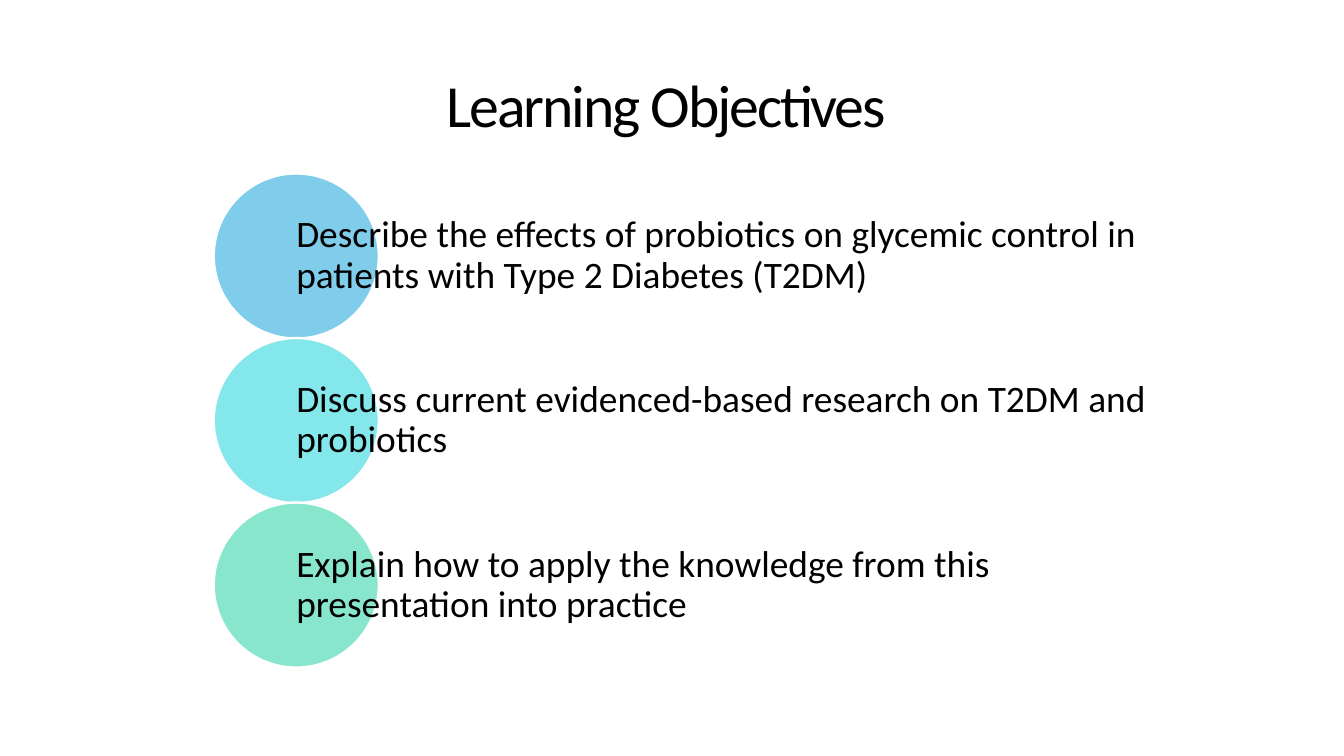
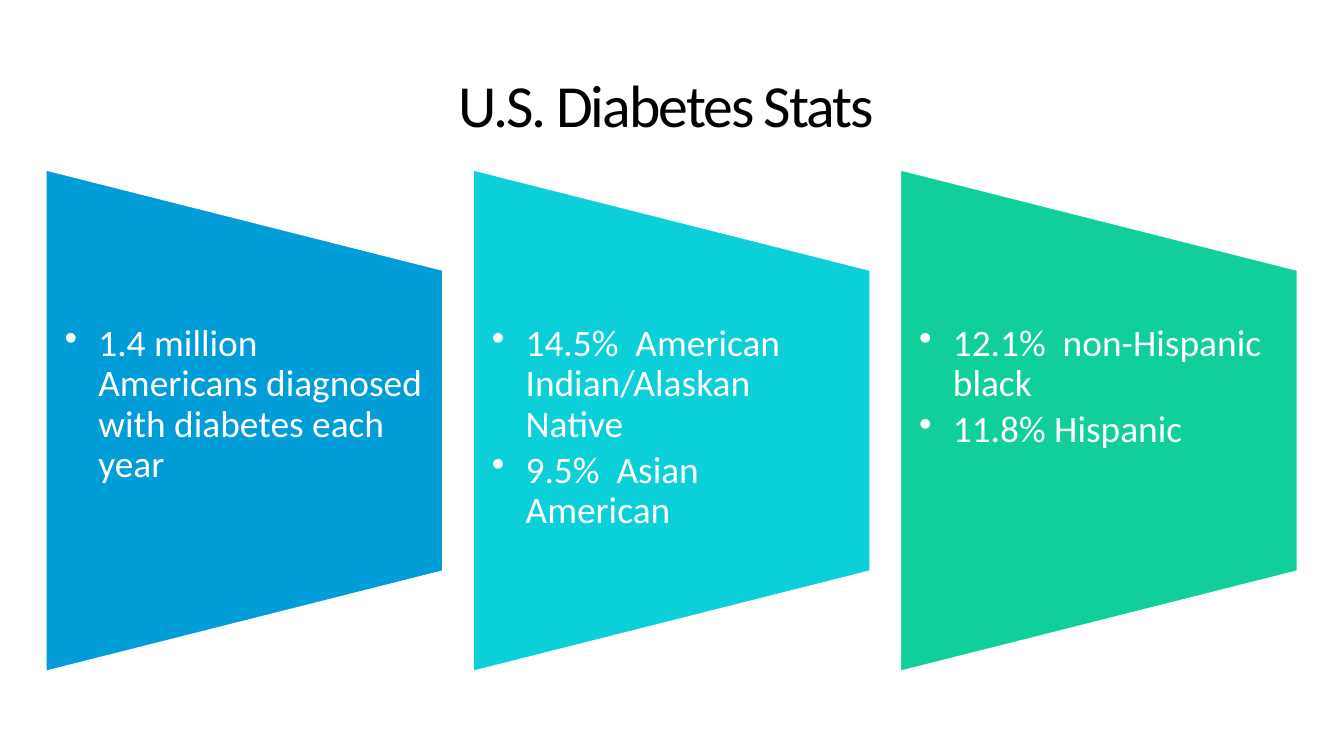
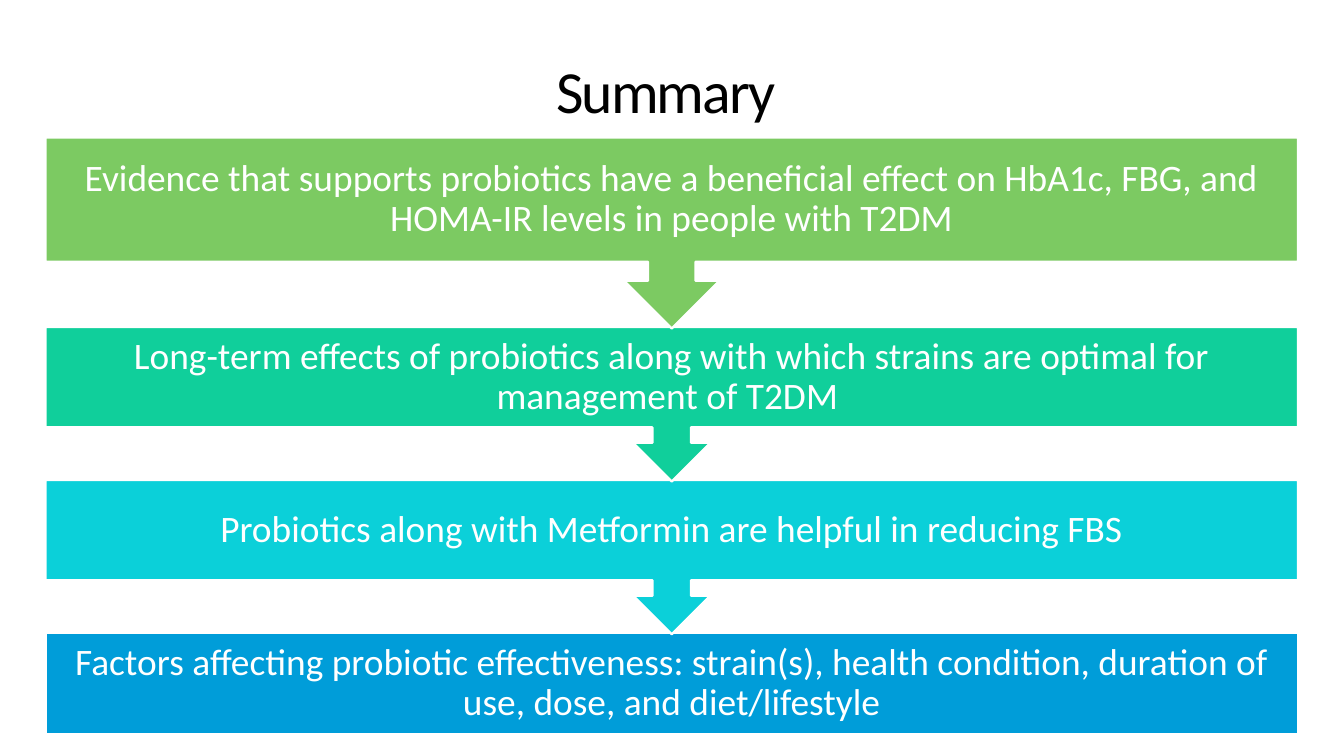
from lxml import etree
from pptx import Presentation
from pptx.dml.color import RGBColor
from pptx.enum.shapes import MSO_SHAPE
from pptx.enum.text import MSO_ANCHOR, PP_ALIGN
from pptx.oxml.ns import qn
from pptx.util import Cm, Pt

LEFT, CENTER = PP_ALIGN.LEFT, PP_ALIGN.CENTER
TOP, MIDDLE = MSO_ANCHOR.TOP, MSO_ANCHOR.MIDDLE
OVAL, RECTANGLE = MSO_SHAPE.OVAL, MSO_SHAPE.RECTANGLE
PANEL, CALLOUT = MSO_SHAPE.FLOWCHART_MANUAL_OPERATION, MSO_SHAPE.UP_ARROW_CALLOUT

# Content
OBJECTIVES = [
    ("blue", "Describe the effects of probiotics on glycemic control in patients with Type 2 Diabetes (T2DM)"),
    ("cyan", "Discuss current evidenced-based research on T2DM and probiotics"),
    ("teal", "Explain how to apply the knowledge from this presentation into practice"),
]
STATS = [
    ("blue", ["1.4 million Americans diagnosed with diabetes each year"]),
    ("cyan", ["14.5%  American Indian/Alaskan Native", "9.5%  Asian American"]),
    ("teal", ["12.1%  non-Hispanic black", "11.8% Hispanic"]),
]
# Colour, shape, height in cm, text
SUMMARY = [
    ("green", CALLOUT, 3.61, "Evidence that supports probiotics have a beneficial effect on HbA1c, FBG, "
     "and HOMA-IR levels in people with T2DM"),
    ("teal", CALLOUT, 2.92, "Long-term effects of probiotics along with which strains are optimal for "
     "management of T2DM "),
    ("cyan", CALLOUT, 2.92, "Probiotics along with Metformin are helpful in reducing FBS"),
    ("blue", RECTANGLE, 1.91, "Factors affecting probiotic effectiveness: strain(s), health condition, "
     "duration of use, dose, and diet/lifestyle"),
]

# Shared style; lengths in cm
COLORS = {"blue": "009DD9", "cyan": "0BD0D9", "teal": "10CF9B", "green": "7CCA62",
          "white": "FFFFFF", "black": "000000"}
FONT = "Calibri"
MARGIN, CONTENT_WIDTH = 0.86, 23.67
TITLE_FORMAT = {"alignment": CENTER, "line_spacing": 0.85}
BODY_FORMAT = {"alignment": LEFT, "line_spacing": 0.9, "space_after": Pt(7)}
BULLET_FORMAT = BODY_FORMAT | {"space_after": Pt(3)}


def rgb(name):
    return RGBColor.from_string(COLORS[name])


def add_text(slide, box, lines, paragraph_format, color="black", size=20,
             insets=(0, 0, 0, 0), anchor=MIDDLE):
    frame = slide.shapes.add_textbox(*map(Cm, box)).text_frame
    frame.word_wrap = True
    frame.vertical_anchor = anchor
    for side, inset in zip(("left", "top", "right", "bottom"), insets):
        setattr(frame, f"margin_{side}", Cm(inset))
    for index, line in enumerate(lines):
        paragraph = frame.add_paragraph() if index else frame.paragraphs[0]
        for name, value in paragraph_format.items():
            setattr(paragraph, name, value)
        run = paragraph.add_run()
        run.text = line
        for name, value in {"name": FONT, "size": Pt(size)}.items():
            setattr(run.font, name, value)
        run.font.color.rgb = rgb(color)
    return frame


def add_title(slide, text, top=1.24):
    frame = add_text(slide, (MARGIN, top, CONTENT_WIDTH, 1.6), [text], TITLE_FORMAT,
                     size=32, insets=(0.25,) * 4, anchor=TOP)
    frame.paragraphs[0].runs[0].font._element.set("spc", "-110")


def add_filled(slide, kind, box, color, rotation=0, opacity=100):
    shape = slide.shapes.add_shape(kind, *map(Cm, box))
    shape.shadow.inherit = False
    shape.rotation = rotation
    shape.fill.solid()
    shape.fill.fore_color.rgb = rgb(color)
    shape.line.color.rgb = rgb("white")
    shape.line.width = Pt(1.25)
    if opacity < 100:
        color_element = shape._element.spPr.find(qn("a:solidFill"))[0]
        etree.SubElement(color_element, qn("a:alpha"), val=str(opacity * 1000))


def add_bullet(paragraph):
    properties = paragraph._p.get_or_add_pPr()
    indent = Cm(0.64)
    properties.set("marL", str(indent))
    properties.set("indent", str(-indent))
    etree.SubElement(properties, qn("a:buChar"), char="•")


def build_objectives(slide):
    add_title(slide, "Learning Objectives ")
    left, top, diameter, pitch = 4.04, 3.28, 3.12, 3.11
    for row, (color, text) in enumerate(OBJECTIVES):
        y = top + row * pitch
        add_filled(slide, OVAL, (left, y, diameter, diameter), color, opacity=50)
        add_text(slide, (left + diameter / 2, y, 16.61, diameter), [text], BODY_FORMAT,
                 insets=(0, 0.08, 0, 0.08))


def build_stats(slide):
    add_title(slide, "U.S. Diabetes Stats ")
    top, width, height = 3.2, 7.52, 9.5
    pitch = (CONTENT_WIDTH - width) / (len(STATS) - 1)
    turn_offset = (height - width) / 2
    for column, (color, lines) in enumerate(STATS):
        x = MARGIN + column * pitch
        # The panel is turned a quarter, so its width and height swap
        add_filled(slide, PANEL, (x - turn_offset, top + turn_offset, height, width), color, rotation=270)
        frame = add_text(slide, (x, top + height * 0.2, width, height * 0.6), lines, BULLET_FORMAT,
                         color="white", insets=(0.36, 1.03, 0.36, 0), anchor=TOP)
        for paragraph in frame.paragraphs:
            add_bullet(paragraph)


def build_summary(slide):
    add_title(slide, "Summary ", top=0.97)
    overlap, body_share = 0.03, 0.65
    bottom = 13.87
    # Stacked from the bottom so that each arrow lies over the next box
    for color, kind, height, text in reversed(SUMMARY):
        y = bottom - height
        is_callout = kind == CALLOUT
        add_filled(slide, kind, (MARGIN, y, CONTENT_WIDTH, height), color, rotation=180 * is_callout)
        body_height = height * body_share if is_callout else height
        add_text(slide, (MARGIN, y, CONTENT_WIDTH, body_height), [text],
                 BODY_FORMAT | {"alignment": CENTER}, color="white", insets=(0.4,) * 4)
        bottom = y + overlap


def main():
    presentation = Presentation()
    presentation.slide_width, presentation.slide_height = Cm(25.4), Cm(14.29)
    blank = presentation.slide_layouts[6]
    for build in (build_objectives, build_stats, build_summary):
        build(presentation.slides.add_slide(blank))
    presentation.save("out.pptx")


if __name__ == "__main__":
    main()
